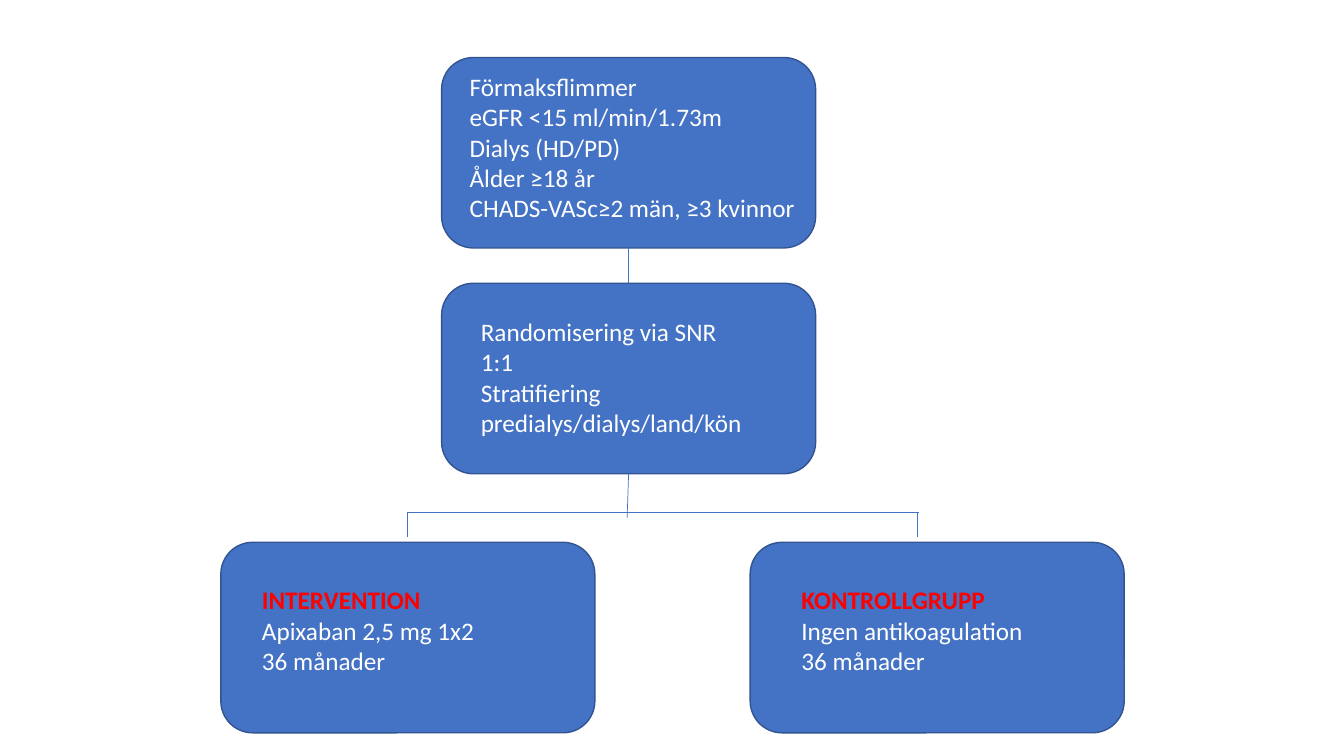
from pptx import Presentation
from pptx.dml.color import RGBColor
from pptx.enum.shapes import MSO_CONNECTOR, MSO_SHAPE
from pptx.enum.text import MSO_AUTO_SIZE
from pptx.util import Emu, Pt
from lxml.etree import SubElement
from pptx.oxml.ns import qn


def px(length):
    return Emu(length * 9144)


def color(hex_code):
    return RGBColor.from_string(hex_code)


BLUE, OUTLINE, WHITE, RED = "4472C4", "325491", "FFFFFF", "FF0000"
STEP_WIDTH, STEP_HEIGHT = 371, 189

prs = Presentation()
prs.slide_width, prs.slide_height = px(1333), px(750)
slide = prs.slides.add_slide(prs.slide_layouts[6])

steps = []
for left, top in [(438, 57), (438, 281), (219, 538), (744, 538)]:
    step = slide.shapes.add_shape(
        MSO_SHAPE.ROUNDED_RECTANGLE, px(left), px(top), px(STEP_WIDTH), px(STEP_HEIGHT)
    )
    step.shadow.inherit = False
    step.fill.solid()
    step.fill.fore_color.rgb = color(BLUE)
    step.line.color.rgb = color(OUTLINE)
    step.line.width = Pt(1)
    steps.append(step)
inclusion, randomisation, intervention, control = steps

branches = []
for x1, y1, x2, y2 in [
    (623, 246, 623, 281),
    (623, 470, 622, 514),
    (911, 508, 404, 508),
    (404, 508, 404, 533),
    (910, 508, 910, 533),
]:
    branch = slide.shapes.add_connector(MSO_CONNECTOR.STRAIGHT, px(x1), px(y1), px(x2), px(y2))
    branch.line.color.rgb = color(BLUE)
    branch.line.width = Pt(0.5)
    SubElement(branch._element.spPr, qn("a:effectLst"))
    branches.append(branch)
branches[0].begin_connect(inclusion, 2)
branches[0].end_connect(randomisation, 0)
branches[1].begin_connect(randomisation, 2)

descriptions = [
    (456, 66, 371, 162, False, [
        "Förmaksflimmer",
        "eGFR <15 ml/min/1.73m",
        "Dialys (HD/PD)",
        "Ålder ≥18 år",
        "CHADS-VASc≥2 män, ≥3 kvinnor",
    ]),
    (467, 309, 288, 131, False, [
        "Randomisering via SNR",
        "1:1",
        "Stratifiering predialys/dialys/land/kön",
    ]),
    (250, 575, 306, 101, True, ["INTERVENTION", "Apixaban 2,5 mg 1x2", "36 månader"]),
    (785, 575, 288, 101, True, ["KONTROLLGRUPP", "Ingen antikoagulation", "36 månader"]),
]
for left, top, width, height, has_heading, lines in descriptions:
    description = slide.shapes.add_textbox(px(left), px(top), px(width), px(height)).text_frame
    description.word_wrap = True
    description.auto_size = MSO_AUTO_SIZE.SHAPE_TO_FIT_TEXT
    description.text = "\n".join(lines)
    for index, paragraph in enumerate(description.paragraphs):
        is_heading = has_heading and index == 0
        font = paragraph.runs[0].font
        font.name = "Calibri"
        font.size = Pt(18)
        font.bold = is_heading
        font.color.rgb = color(RED if is_heading else WHITE)

prs.save("out.pptx")
